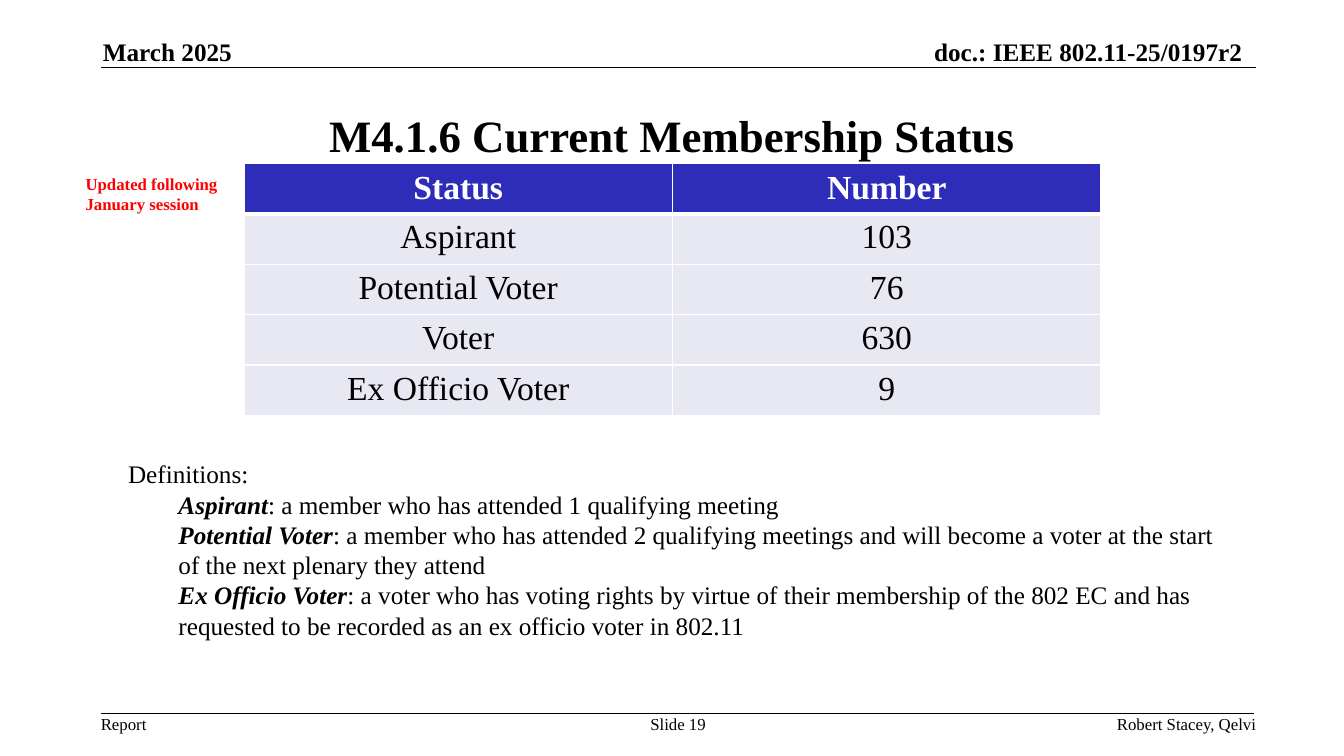
import lxml.etree
import pptx
import pptx.dml.color
import pptx.enum.shapes
import pptx.enum.text
import pptx.oxml.ns
import pptx.util

Inches, Pt = pptx.util.Inches, pptx.util.Pt
ALIGN, ANCHOR = pptx.enum.text.PP_ALIGN, pptx.enum.text.MSO_ANCHOR

# Content
TITLE = "M4.1.6 Current Membership Status"
NOTE = "Updated following January session"
STATUS_ROWS = [
    ("Status", "Number"),
    ("Aspirant", "103"),
    ("Potential Voter", "76"),
    ("Voter", "630"),
    ("Ex Officio Voter", "9"),
]
DEFINITIONS = [
    ("Aspirant", ": a member who has attended 1 qualifying meeting"),
    ("Potential Voter", ": a member who has attended 2 qualifying meetings and will "
     "become a voter at the start of the next plenary they attend"),
    ("Ex Officio Voter", ": a voter who has voting rights by virtue of their membership "
     "of the 802 EC and has requested to be recorded as an ex officio voter in 802.11"),
]
HEADER_TOP, FOOTER_TOP = 0.36, 7.08
# text, left, top, width, height, format
MARGIN_TEXTS = [
    ("March 2025", 1.02, HEADER_TOP, 1.69, 0.3, dict(size=18, bold=True)),
    ("doc.: IEEE 802.11-25/0197r2", 8.6, HEADER_TOP, 3.72, 0.3,
     dict(size=18, bold=True, align=ALIGN.RIGHT)),
    ("Report", 1, FOOTER_TOP, 0.46, 0.2, dict(size=12)),
    ("Slide 19", 6.43, FOOTER_TOP, 0.59, 0.2, dict(size=12, align=ALIGN.CENTER)),
    ("Robert Stacey, Qelvi", 10.09, FOOTER_TOP, 2.37, 0.2,
     dict(size=12, align=ALIGN.RIGHT)),
]
RULES = [(0.67, 12.46), (FOOTER_TOP, 12.44)]  # height on the slide, right end
COLORS = {"text": "000000", "note": "FF0000", "white": "FFFFFF",
          "header": "2D2DB9", "row": "E8E8F3"}
FONT = "Times New Roman"


def rgb(name):
    return pptx.dml.color.RGBColor.from_string(COLORS[name])


def write(paragraph, text, size=18, color="text", bold=False, italic=False, align=ALIGN.LEFT):
    paragraph.alignment = align
    run = paragraph.add_run()
    run.text = text
    run.font.name, run.font.size = FONT, Pt(size)
    run.font.bold, run.font.italic = bold, italic
    run.font.color.rgb = rgb(color)


def place(shape, left, top, width, height):
    shape.left, shape.top = Inches(left), Inches(top)
    shape.width, shape.height = Inches(width), Inches(height)


def add_child(parent, tag, **attributes):
    return lxml.etree.SubElement(parent, pptx.oxml.ns.qn(tag), **attributes)


def add_border(cell, side, width):
    line = add_child(cell._tc.get_or_add_tcPr(), "a:ln" + side, w=str(Pt(width)))
    fill = add_child(line, "a:solidFill")
    add_child(fill, "a:srgbClr", val=COLORS["white"])


def add_rule(slide, top, right):
    rule = slide.shapes.add_connector(
        pptx.enum.shapes.MSO_CONNECTOR.STRAIGHT,
        Inches(1), Inches(top), Inches(right), Inches(top))
    rule.line.color.rgb = rgb("text")
    rule.line.width = Pt(1)
    add_child(rule._element.spPr, "a:effectLst")


def add_margin_text(slide, text, left, top, width, height, text_format):
    box = slide.shapes.add_textbox(Inches(left), Inches(top), Inches(width), Inches(height))
    frame = box.text_frame
    frame.word_wrap = False
    frame.margin_left = frame.margin_right = frame.margin_top = frame.margin_bottom = 0
    frame.vertical_anchor = ANCHOR.BOTTOM if top == HEADER_TOP else ANCHOR.TOP
    write(frame.paragraphs[0], text, **text_format)


def add_title(slide):
    title = slide.shapes.title
    place(title, 1, 0.75, 11.33, 1.17)
    title.text_frame.auto_size = pptx.enum.text.MSO_AUTO_SIZE.NONE
    title.text_frame.vertical_anchor = ANCHOR.MIDDLE
    write(title.text_frame.paragraphs[0], TITLE, size=32, bold=True, align=ALIGN.CENTER)


def add_note(slide):
    note = slide.shapes.add_textbox(Inches(0.75), Inches(1.67), Inches(1.58), Inches(0.5))
    note.text_frame.word_wrap = True
    write(note.text_frame.paragraphs[0], NOTE, size=12, color="note", bold=True)


def add_definitions(slide):
    body = slide.placeholders[1]
    place(body, 1.17, 4.5, 11.17, 1.92)
    frame = body.text_frame
    frame.auto_size = pptx.enum.text.MSO_AUTO_SIZE.NONE
    frame.vertical_anchor = ANCHOR.TOP
    for index, (term, meaning) in enumerate([("", "Definitions:")] + DEFINITIONS):
        paragraph = frame.add_paragraph() if index else frame.paragraphs[0]
        paragraph.level = 1 if index else 0
        paragraph.space_before = Pt(0)
        properties = paragraph._p.get_or_add_pPr()
        properties.set("marL", str(Inches(0.5) if index else 0))
        properties.set("indent", "0")
        add_child(properties, "a:buNone")
        if term:
            write(paragraph, term, bold=True, italic=True)
        write(paragraph, meaning)


def add_status_table(slide):
    table = slide.shapes.add_table(
        len(STATUS_ROWS), 2, Inches(2.42), Inches(1.62), Inches(8.5), Inches(2.5)).table
    for row_index, values in enumerate(STATUS_ROWS):
        is_header = row_index == 0
        for column_index, value in enumerate(values):
            cell = table.cell(row_index, column_index)
            for side in "LRTB":
                thick = (is_header and side == "B") or (row_index == 1 and side == "T")
                add_border(cell, side, 3 if thick else 1)
            cell.fill.solid()
            cell.fill.fore_color.rgb = rgb("header" if is_header else "row")
            cell.vertical_anchor = ANCHOR.MIDDLE if is_header else ANCHOR.TOP
            write(cell.text_frame.paragraphs[0], value, size=24, bold=is_header,
                  color="white" if is_header else "text", align=ALIGN.CENTER)


def main():
    presentation = pptx.Presentation()
    presentation.slide_width, presentation.slide_height = Inches(13.33), Inches(7.5)
    slide = presentation.slides.add_slide(presentation.slide_layouts[1])

    # Header and footer
    for top, right in RULES:
        add_rule(slide, top, right)
    for margin_text in MARGIN_TEXTS:
        add_margin_text(slide, *margin_text)

    # Main area
    add_title(slide)
    add_note(slide)
    add_definitions(slide)
    add_status_table(slide)
    presentation.save("out.pptx")


if __name__ == "__main__":
    main()
